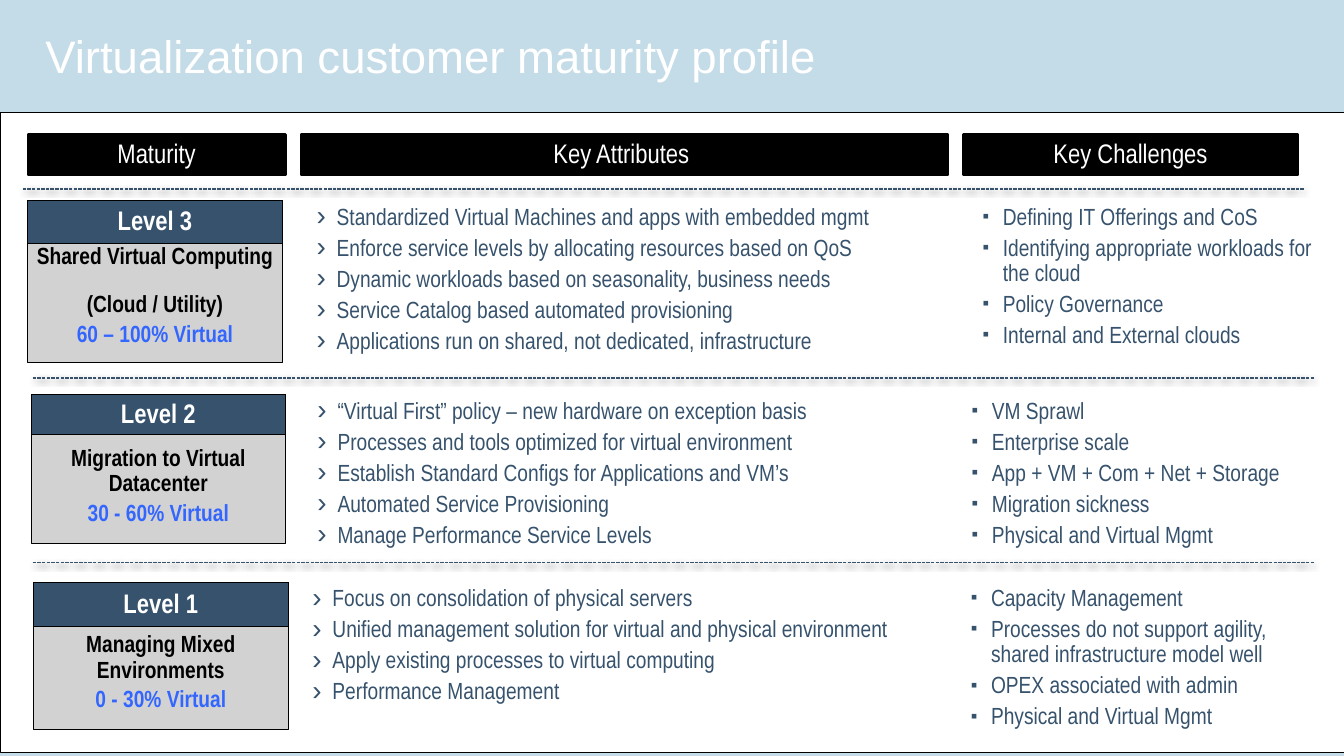
from dataclasses import dataclass

from lxml import etree
from pptx import Presentation
from pptx import util as u
from pptx.dml.color import RGBColor
from pptx.enum import dml, shapes, text
from pptx.oxml import ns

NARROW = "Arial Narrow"
BLACK, WHITE, NAVY, GREY, BLUE = "000000", "FFFFFF", "36526C", "D2D2D2", "3366FF"
CARD_WIDTH = 3.03
BULLET_INDENT = 0.24


@dataclass
class Box:
    left: float
    top: float
    width: float
    height: float


@dataclass
class Style:
    size: float
    color: str
    font: str = NARROW
    bold: bool = False


@dataclass
class Line:
    words: str
    style: Style


@dataclass
class Bullet:
    sign: str
    percent: int


@dataclass
class BulletList:
    box: Box
    bullet: Bullet
    items: list[str]


@dataclass
class Level:
    name: str
    stage: str
    share: str
    card: Box
    head_height: float
    stage_inset: float
    attributes: BulletList
    challenges: BulletList


TITLE = Style(39, WHITE, "Arial")
HEADER = Style(23, WHITE)
LEVEL_NAME = Style(23, WHITE, bold=True)
STAGE = Style(20, BLACK, bold=True)
SHARE = Style(20, BLUE, bold=True)
ITEM = Style(20, NAVY)
ARROW, SQUARE = Bullet("›", 120), Bullet("▪", 80)

HEADERS = [("Maturity", 0.33, 3.07), ("Key Attributes ", 3.58, 7.71), ("Key Challenges", 11.47, 3.98)]
DIVIDERS = [(0.27, 2.25), (0.39, 4.5), (0.39, 6.7)]
LEVELS = [
    Level("Level 3", "Shared Virtual Computing \v(Cloud / Utility)", "60 – 100% Virtual",
          Box(0.33, 2.39, CARD_WIDTH, 1.92), 0.51, 0.4,
          BulletList(Box(3.67, 2.39, 7.96, 2), ARROW, [
              "Standardized Virtual Machines and apps with embedded mgmt",
              "Enforce service levels by allocating resources based on QoS",
              "Dynamic workloads based on seasonality, business needs",
              "Service Catalog based automated provisioning",
              "Applications run on shared, not dedicated, infrastructure"]),
          BulletList(Box(11.6, 2.39, 4.27, 1.7), SQUARE, [
              "Defining IT Offerings and CoS",
              "Identifying appropriate workloads for the cloud",
              "Policy Governance",
              "Internal and External clouds"])),
    Level("Level 2", "Migration to Virtual Datacenter", "30 - 60% Virtual",
          Box(0.37, 4.7, CARD_WIDTH, 1.77), 0.47, 0.45,
          BulletList(Box(3.68, 4.7, 8.53, 1.58), ARROW, [
              "“Virtual First” policy – new hardware on exception basis",
              "Processes and tools optimized for virtual environment",
              "Establish Standard Configs for Applications and VM’s",
              "Automated Service Provisioning",
              "Manage Performance Service Levels"]),
          BulletList(Box(11.47, 4.7, 4.13, 1.7), SQUARE, [
              "VM Sprawl",
              "Enterprise scale",
              "App + VM + Com + Net + Storage",
              "Migration sickness",
              "Physical and Virtual Mgmt"])),
    Level("Level 1", "Managing Mixed Environments", "0 - 30% Virtual",
          Box(0.4, 6.93, CARD_WIDTH, 1.76), 0.53, 0.45,
          BulletList(Box(3.62, 6.93, 7.47, 1.7), ARROW, [
              "Focus on consolidation of physical servers",
              "Unified management solution for virtual and physical environment",
              "Apply existing processes to virtual computing",
              "Performance Management"]),
          BulletList(Box(11.46, 6.93, 4.4, 1.7), SQUARE, [
              "Capacity Management",
              "Processes do not support agility, shared infrastructure model well",
              "OPEX associated with admin",
              "Physical and Virtual Mgmt"])),
]


def rgb(color: str) -> RGBColor:
    return RGBColor.from_string(color)


def apply(target, values: dict) -> None:
    for name, value in values.items():
        setattr(target, name, value)


def place(box: Box) -> list[int]:
    return [u.Inches(side) for side in (box.left, box.top, box.width, box.height)]


def add_bullet(para, bullet: Bullet) -> None:
    properties = para._p.get_or_add_pPr()
    properties.set("marL", str(u.Inches(BULLET_INDENT)))
    properties.set("indent", str(-u.Inches(BULLET_INDENT)))
    size = etree.SubElement(properties, ns.qn("a:buSzPct"))
    size.set("val", str(bullet.percent * 1000))
    etree.SubElement(properties, ns.qn("a:buFont")).set("typeface", "Arial")
    etree.SubElement(properties, ns.qn("a:buChar")).set("char", bullet.sign)


def write(frame, lines: list[Line], align, gap: float = 0, bullet: Bullet | None = None) -> None:
    apply(frame, {"word_wrap": True, "auto_size": text.MSO_AUTO_SIZE.NONE})
    for index, line in enumerate(lines):
        para = frame.add_paragraph() if index else frame.paragraphs[0]
        para.text = line.words
        apply(para, {"alignment": align, "line_spacing": 0.9, "space_before": u.Pt(gap if index else 0)})
        if bullet:
            add_bullet(para, bullet)
        for span in para.runs:
            apply(span.font, {"name": line.style.font, "size": u.Pt(line.style.size), "bold": line.style.bold})
            span.font.color.rgb = rgb(line.style.color)


def add_panel(page, box: Box, fill: str, weight: float, lines: list[Line], top_inset: float = 0.05) -> None:
    panel = page.shapes.add_shape(shapes.MSO_SHAPE.RECTANGLE, *place(box))
    panel.shadow.inherit = False
    panel.fill.solid()
    panel.fill.fore_color.rgb = rgb(fill)
    panel.line.color.rgb = rgb(BLACK)
    panel.line.width = u.Pt(weight)
    if lines:
        apply(panel.text_frame, {"margin_top": u.Inches(top_inset), "vertical_anchor": text.MSO_ANCHOR.MIDDLE})
        write(panel.text_frame, lines, text.PP_ALIGN.CENTER, 4)


def add_divider(page, left: float, top: float) -> None:
    start, end, height = u.Inches(left), u.Inches(left + 15.25), u.Inches(top)
    divider = page.shapes.add_connector(shapes.MSO_CONNECTOR.STRAIGHT, start, height, end, height)
    divider.line.color.rgb = rgb(NAVY)
    apply(divider.line, {"width": u.Pt(1), "dash_style": dml.MSO_LINE.SQUARE_DOT})
    effects = etree.SubElement(divider._element.spPr, ns.qn("a:effectLst"))
    shadow = etree.SubElement(effects, ns.qn("a:outerShdw"))
    for name, value in {"blurRad": u.Pt(5), "dist": u.Pt(1.8), "dir": 90 * 60000, "rotWithShape": 0}.items():
        shadow.set(name, str(int(value)))
    shade = etree.SubElement(shadow, ns.qn("a:srgbClr"))
    shade.set("val", BLACK)
    etree.SubElement(shade, ns.qn("a:alpha")).set("val", "35000")


def add_list(page, entry: BulletList) -> None:
    box = page.shapes.add_textbox(*place(entry.box))
    write(box.text_frame, [Line(item, ITEM) for item in entry.items], text.PP_ALIGN.LEFT, 5, entry.bullet)


def add_level(page, level: Level) -> None:
    card = level.card
    add_panel(page, card, GREY, 0.75, [Line(level.stage, STAGE), Line(level.share, SHARE)], level.stage_inset)
    head = Box(card.left, card.top, card.width, level.head_height)
    add_panel(page, head, NAVY, 0.75, [Line(level.name, LEVEL_NAME)])
    add_list(page, level.attributes)
    add_list(page, level.challenges)


def add_title(page, words: str) -> None:
    title = page.shapes.title
    sides = place(Box(0.4, 0.07, 12.93, 1.26))
    apply(title, dict(zip(("left", "top", "width", "height"), sides)))
    apply(title.text_frame, {"margin_left": u.Inches(0.14), "margin_right": u.Inches(0.14),
                             "vertical_anchor": text.MSO_ANCHOR.MIDDLE})
    write(title.text_frame, [Line(words, TITLE)], text.PP_ALIGN.LEFT)


def main() -> None:
    deck = Presentation()
    apply(deck, {"slide_width": u.Inches(16), "slide_height": u.Inches(9)})
    page = deck.slides.add_slide(deck.slide_layouts[5])
    page.background.fill.solid()
    page.background.fill.fore_color.rgb = rgb("C4DBE8")
    add_title(page, "Virtualization customer maturity profile")
    add_panel(page, Box(0, 1.34, 16, 7.62), WHITE, 0.75, [])
    for words, left, width in HEADERS:
        add_panel(page, Box(left, 1.6, width, 0.48), BLACK, 2, [Line(words, HEADER)])
    for left, top in DIVIDERS:
        add_divider(page, left, top)
    for level in LEVELS:
        add_level(page, level)
    deck.save("out.pptx")


if __name__ == "__main__":
    main()
